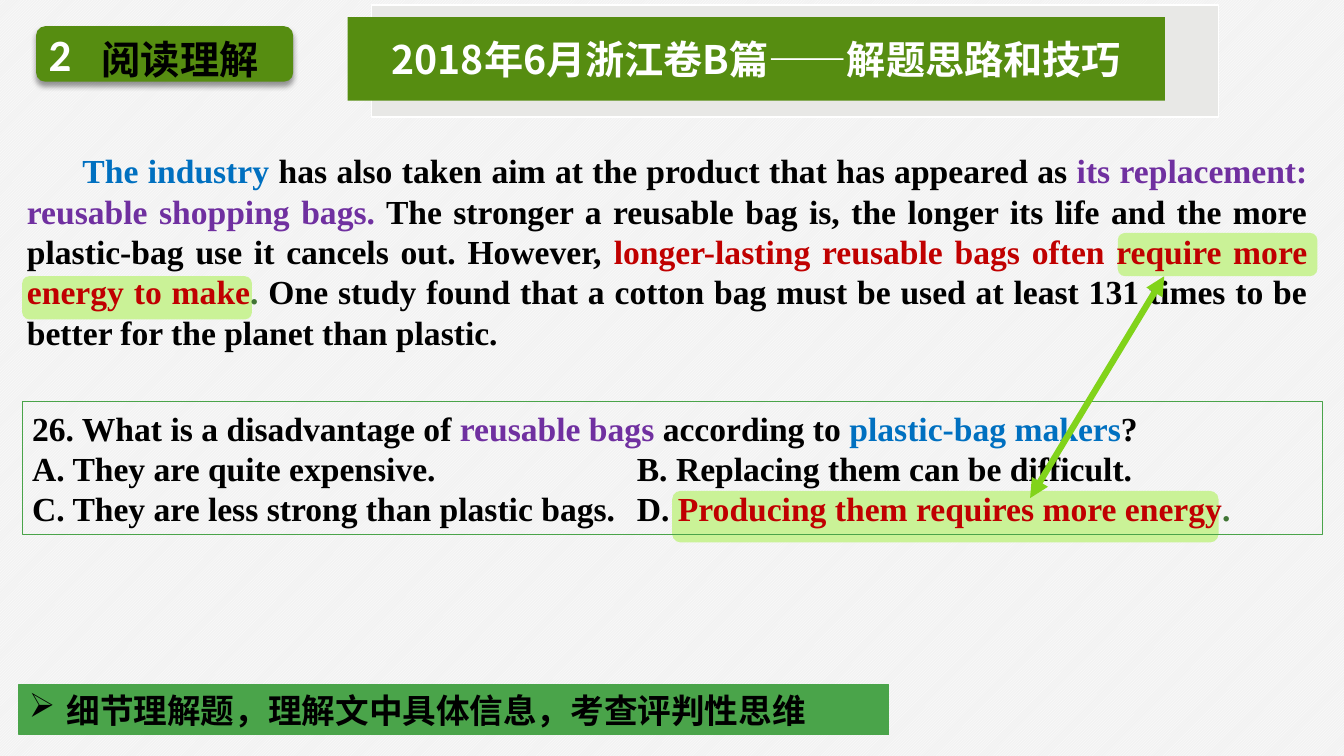
from lxml import etree
from pptx import Presentation, util as u
from pptx.dml.color import RGBColor
from pptx.enum import dml, shapes, text
from pptx.oxml import ns

WHITE = RGBColor(0xFF, 0xFF, 0xFF)
BLACK = RGBColor(0, 0, 0)
PAPER = RGBColor(0xF2, 0xF2, 0xF2)
GREY = RGBColor(0xE8, 0xE8, 0xE6)
DARK_GREEN = RGBColor(0x56, 0x8D, 0x11)
GREEN = RGBColor(0x4A, 0xA4, 0x4A)
LIME = RGBColor(0x81, 0xD3, 0x1A)
PALE_LIME = RGBColor(0xCA, 0xF2, 0x97)
STOP_GREEN = RGBColor(0x40, 0x74, 0x34)
BLUE = RGBColor(0x00, 0x70, 0xC0)
PURPLE = RGBColor(0x70, 0x30, 0xA0)
RED = RGBColor(0xC0, 0x00, 0x00)

CHINESE_FONT = "Noto Sans CJK SC"
SERIF_FONT = "Times New Roman"
RECTANGLE = shapes.MSO_SHAPE.RECTANGLE
ROUNDED = shapes.MSO_SHAPE.ROUNDED_RECTANGLE

presentation = Presentation()
presentation.slide_width = u.Cm(33.87)
presentation.slide_height = u.Cm(19.05)
slide = presentation.slides.add_slide(presentation.slide_layouts[6])

background = slide.background.fill
background.patterned()
background.pattern = dml.MSO_PATTERN.LIGHT_UPWARD_DIAGONAL
background.fore_color.rgb = WHITE
background.back_color.rgb = PAPER


def add_box(kind, box, fill=None, line=None, line_width=0.75):
    shape = slide.shapes.add_shape(kind, *[u.Cm(length) for length in box])
    shape.shadow.inherit = False
    if fill is None:
        shape.fill.background()
    else:
        shape.fill.solid()
        shape.fill.fore_color.rgb = fill
    if line is None:
        shape.line.fill.background()
    else:
        shape.line.color.rgb = line
        shape.line.width = u.Pt(line_width)
    return shape


def write(paragraph, pieces, size, font, alignment):
    paragraph.alignment = alignment
    for words, color in pieces:
        run = paragraph.add_run()
        run.text = words
        run.font.size = u.Pt(size)
        run.font.bold = True
        run.font.color.rgb = color
        run.font.name = font
        east_asian = etree.SubElement(run.font._element, ns.qn("a:ea"))
        east_asian.set("typeface", CHINESE_FONT)


highlights = [
    (0.56, 6.96, 5.79, 1.09),
    (28.17, 5.87, 5.03, 1.09),
    (16.94, 12.37, 13.77, 1.3),
]
for box in highlights:
    add_box(ROUNDED, box, PALE_LIME)

badge = add_box(ROUNDED, (0.91, 0.66, 6.48, 1.4), DARK_GREEN)
write(badge.text_frame.paragraphs[0], [("2", WHITE)], 32, "Calibri", text.PP_ALIGN.LEFT)
effects = badge._element.spPr.find(ns.qn("a:effectLst"))
shadow = etree.SubElement(effects, ns.qn("a:outerShdw"), blurRad=str(u.Pt(4)),
                          dist=str(u.Pt(3)), dir="5400000", rotWithShape="0")
shadow_color = etree.SubElement(shadow, ns.qn("a:srgbClr"), val="000000")
etree.SubElement(shadow_color, ns.qn("a:alpha"), val="40000")

section = slide.shapes.add_textbox(u.Cm(2.29), u.Cm(0.76), u.Cm(4.5), u.Cm(1.45))
section.text_frame.word_wrap = False
section.text_frame.auto_size = text.MSO_AUTO_SIZE.SHAPE_TO_FIT_TEXT
write(section.text_frame.paragraphs[0], [("阅读理解", BLACK)], 28, CHINESE_FONT,
      text.PP_ALIGN.CENTER)

add_box(RECTANGLE, (9.37, 0.13, 21.34, 2.82), GREY, WHITE, 1)
title = add_box(RECTANGLE, (8.76, 0.43, 20.6, 2.11), DARK_GREEN)
title.text_frame.margin_left = title.text_frame.margin_right = u.Cm(0.2)
title.text_frame.margin_top = title.text_frame.margin_bottom = u.Cm(0.1)
write(title.text_frame.paragraphs[0], [("2018年6月浙江卷B篇——解题思路和技巧", WHITE)],
      28, CHINESE_FONT, text.PP_ALIGN.CENTER)

passage = slide.shapes.add_textbox(u.Cm(0.43), u.Cm(3.66), u.Cm(32.77), u.Cm(5.38))
passage.text_frame.word_wrap = True
passage.text_frame.auto_size = text.MSO_AUTO_SIZE.SHAPE_TO_FIT_TEXT
passage_paragraph = passage.text_frame.paragraphs[0]
write(passage_paragraph, [
    ("The industry ", BLUE),
    ("has also taken aim at the product that has appeared as ", BLACK),
    ("its replacement: reusable shopping bags.", PURPLE),
    (" The stronger a reusable bag is, the longer its life and the more plastic-bag use "
     "it cancels out. However, ", BLACK),
    ("longer-lasting reusable bags often require more energy to make", RED),
    (".", STOP_GREEN),
    (" One study found that a cotton bag must be used at least 131 times to be better "
     "for the planet than plastic.", BLACK),
], 24, SERIF_FONT, text.PP_ALIGN.JUSTIFY)
passage_paragraph._p.get_or_add_pPr().set("indent", str(u.Cm(1.4)))

question = add_box(RECTANGLE, (0.56, 10.13, 32.77, 3.33), line=GREEN)
question.text_frame.auto_size = text.MSO_AUTO_SIZE.SHAPE_TO_FIT_TEXT
question_lines = [
    [("26. What is a disadvantage of ", BLACK), ("reusable bags ", PURPLE),
     ("according to ", BLACK), ("plastic-bag makers", BLUE), ("?", BLACK)],
    [("A. They are quite expensive.\tB. Replacing them can be difficult.", BLACK)],
    [("C. They are less strong than plastic bags.\tD. ", BLACK),
     ("Producing them requires more energy", RED), (".", STOP_GREEN)],
]
for index, pieces in enumerate(question_lines):
    frame = question.text_frame
    paragraph = frame.add_paragraph() if index else frame.paragraphs[0]
    write(paragraph, pieces, 24, SERIF_FONT, text.PP_ALIGN.JUSTIFY)
    tabs = etree.SubElement(paragraph._p.get_or_add_pPr(), ns.qn("a:tabLst"))
    etree.SubElement(tabs, ns.qn("a:tab"), pos=str(u.Cm(15.24)), algn="l")

arrow = slide.shapes.add_connector(shapes.MSO_CONNECTOR.STRAIGHT, u.Cm(29.34), u.Cm(6.96),
                                   u.Cm(25.96), u.Cm(12.55))
arrow.line.color.rgb = LIME
arrow.line.width = u.Pt(4.5)
for end in ("a:headEnd", "a:tailEnd"):
    etree.SubElement(arrow.line._get_or_add_ln(), ns.qn(end), type="triangle")
etree.SubElement(arrow._element.spPr, ns.qn("a:effectLst"))

summary = add_box(RECTANGLE, (0.48, 17.25, 21.92, 1.27), GREEN, GREEN)
summary.text_frame.auto_size = text.MSO_AUTO_SIZE.SHAPE_TO_FIT_TEXT
summary_paragraph = summary.text_frame.paragraphs[0]
write(summary_paragraph, [("细节理解题，理解文中具体信息，考查评判性思维", BLACK)],
      24, "Calibri", text.PP_ALIGN.LEFT)
properties = summary_paragraph._p.get_or_add_pPr()
properties.set("marL", str(u.Cm(0.95)))
properties.set("indent", str(u.Cm(-0.95)))
etree.SubElement(properties, ns.qn("a:buChar"), char="➢")

presentation.save("out.pptx")
